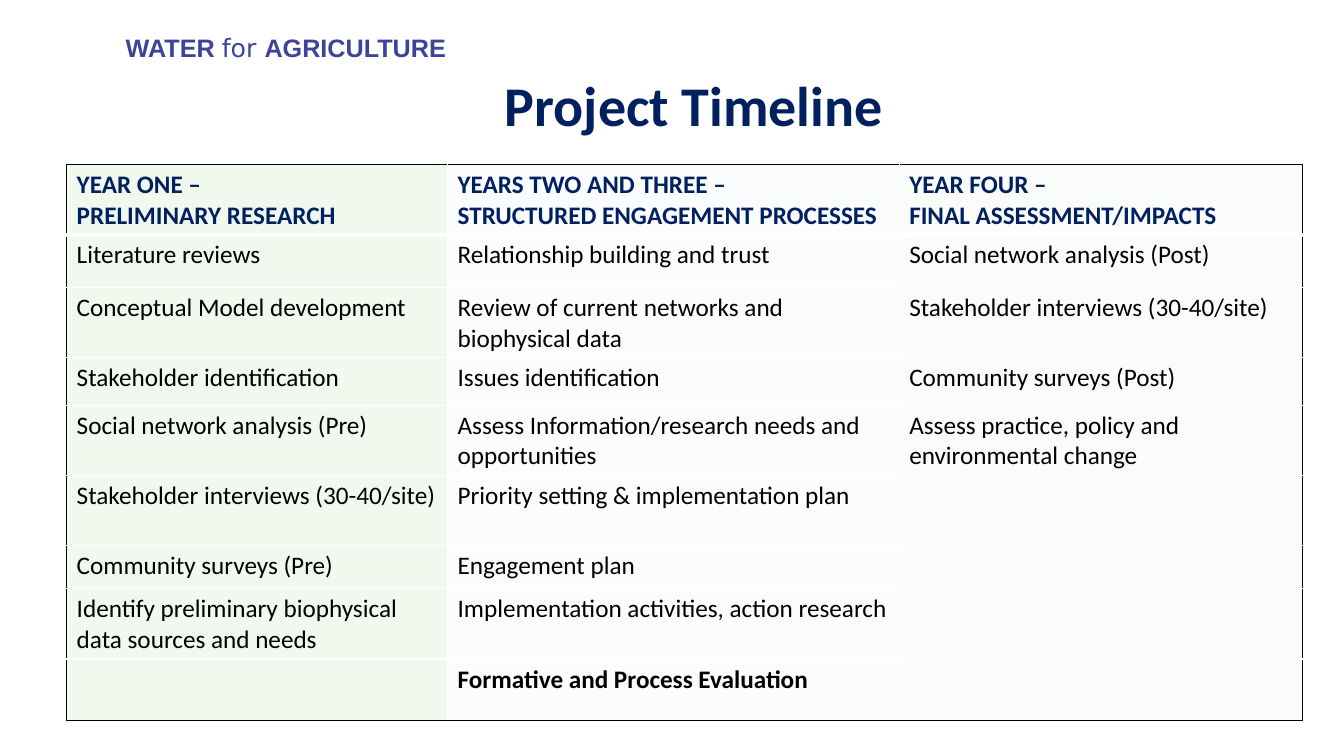
from lxml import etree
from pptx import Presentation
from pptx.dml.color import RGBColor
from pptx.enum.text import MSO_ANCHOR, MSO_AUTO_SIZE, PP_ALIGN
from pptx.oxml.ns import qn
from pptx.util import Cm, Pt

LEFT = PP_ALIGN.LEFT
MIDDLE = MSO_ANCHOR.MIDDLE
NO_FIT = MSO_AUTO_SIZE.NONE

NAVY = RGBColor(0x00, 0x20, 0x60)
VIOLET = RGBColor(0x3C, 0x43, 0x99)
BLACK = RGBColor(0x00, 0x00, 0x00)
WHITE = RGBColor(0xFF, 0xFF, 0xFF)
GREEN = RGBColor(0xE2, 0xF0, 0xD9)
BLUE = RGBColor(0xDE, 0xEB, 0xF7)

WIDTHS = (9.6, 11.38, 10.16)
HEIGHTS = (1.75, 1.32, 1.75, 1.19, 1.75, 1.75, 1.09, 1.65, 1.55)
FILLS = ((GREEN, 45), (BLUE, 12), (GREEN, 14))
ROWS = (
    ("YEAR ONE –\nPRELIMINARY RESEARCH",
     "YEARS TWO AND THREE –\nSTRUCTURED ENGAGEMENT PROCESSES",
     "YEAR FOUR –\nFINAL ASSESSMENT/IMPACTS"),
    ("Literature reviews", "Relationship building and trust",
     "Social network analysis (Post)"),
    ("Conceptual Model development",
     "Review of current networks and biophysical data",
     "Stakeholder interviews (30-40/site)"),
    ("Stakeholder identification", "Issues identification",
     "Community surveys (Post)"),
    ("Social network analysis (Pre)",
     "Assess Information/research needs and opportunities",
     "Assess practice, policy and environmental change"),
    ("Stakeholder interviews (30-40/site)",
     "Priority setting & implementation plan", ""),
    ("Community surveys (Pre)", "Engagement plan", ""),
    ("Identify preliminary biophysical data sources and needs",
     "Implementation activities, action research", ""),
    ("", "Formative and Process Evaluation", ""),
)


def apply(item, **values):
    for name, value in values.items():
        setattr(item, name, value)


class Deck:
    base = {"name": "Calibri", "size": Pt(18), "bold": False}

    def __init__(self):
        self.show = Presentation()
        apply(self.show, slide_width=Cm(33.87), slide_height=Cm(19.05))
        self.slide = self.show.slides.add_slide(self.show.slide_layouts[5])

    def style(self, font, color, **values):
        apply(font, **{**self.base, **values})
        font.color.rgb = color

    def title(self, text, left, top, width, height):
        shape = self.slide.shapes.title
        apply(shape, left=Cm(left), top=Cm(top),
              width=Cm(width), height=Cm(height))
        frame = shape.text_frame
        frame.text = text
        apply(frame, auto_size=NO_FIT, vertical_anchor=MIDDLE)
        para = frame.paragraphs[0]
        apply(para, alignment=LEFT, line_spacing=0.9)
        self.style(para.runs[0].font, NAVY, size=Pt(40), bold=True)

    def label(self, parts, left, top, width, height):
        box = self.slide.shapes.add_textbox(
            Cm(left), Cm(top), Cm(width), Cm(height))
        box.text_frame.word_wrap = True
        para = box.text_frame.paragraphs[0]
        apply(para, line_spacing=1.25, space_after=Pt(10))
        for text, face, bold in parts:
            run = para.add_run()
            run.text = text
            self.style(run.font, VIOLET, name=face, bold=bold)

    def border(self, cell, side, color, points):
        line = etree.SubElement(cell._tc.get_or_add_tcPr(),
                                qn("a:ln" + side), w=str(Pt(points)))
        fill = etree.SubElement(line, qn("a:solidFill"))
        etree.SubElement(fill, qn("a:srgbClr"), val=str(color))

    def tint(self, cell, color, alpha):
        cell.fill.solid()
        cell.fill.fore_color.rgb = color
        tone = cell._tc.tcPr.find(qn("a:solidFill"))[0]
        etree.SubElement(tone, qn("a:alpha"), val=str(alpha * 1000))

    def table(self, rows, left, top):
        frame = self.slide.shapes.add_table(
            len(rows), len(WIDTHS), Cm(left), Cm(top),
            Cm(sum(WIDTHS)), Cm(sum(HEIGHTS)))
        grid = frame.table
        grid.horz_banding = False
        for column, width in zip(grid.columns, WIDTHS):
            column.width = Cm(width)
        for row, height in zip(grid.rows, HEIGHTS):
            row.height = Cm(height)
        end, edge = len(rows) - 1, len(WIDTHS) - 1
        for r, texts in enumerate(rows):
            for c, text in enumerate(texts):
                cell = grid.cell(r, c)
                cell.text = text
                for para in cell.text_frame.paragraphs:
                    self.style(para.font, BLACK if r else NAVY,
                               bold=r in (0, end))
                sides = (("L", c == 0, 1), ("R", c == edge, 1),
                         ("T", r == 0, 3 if r == 1 else 1),
                         ("B", r == end, 3 if r == 0 else 1))
                for side, outer, points in sides:
                    self.border(cell, side, BLACK if outer else WHITE, points)
                self.tint(cell, *FILLS[c])


def main():
    deck = Deck()
    deck.label((("WATER ", "Arial", True), ("for ", "DejaVu Sans", False),
                ("AGRICULTURE", "Arial", True)), 2.92, 0.5, 17.15, 2.13)
    deck.title("Project Timeline", 12.47, 0.89, 21, 3.68)
    deck.table(ROWS, 1.68, 4.14)
    deck.show.save("out.pptx")


if __name__ == "__main__":
    main()
